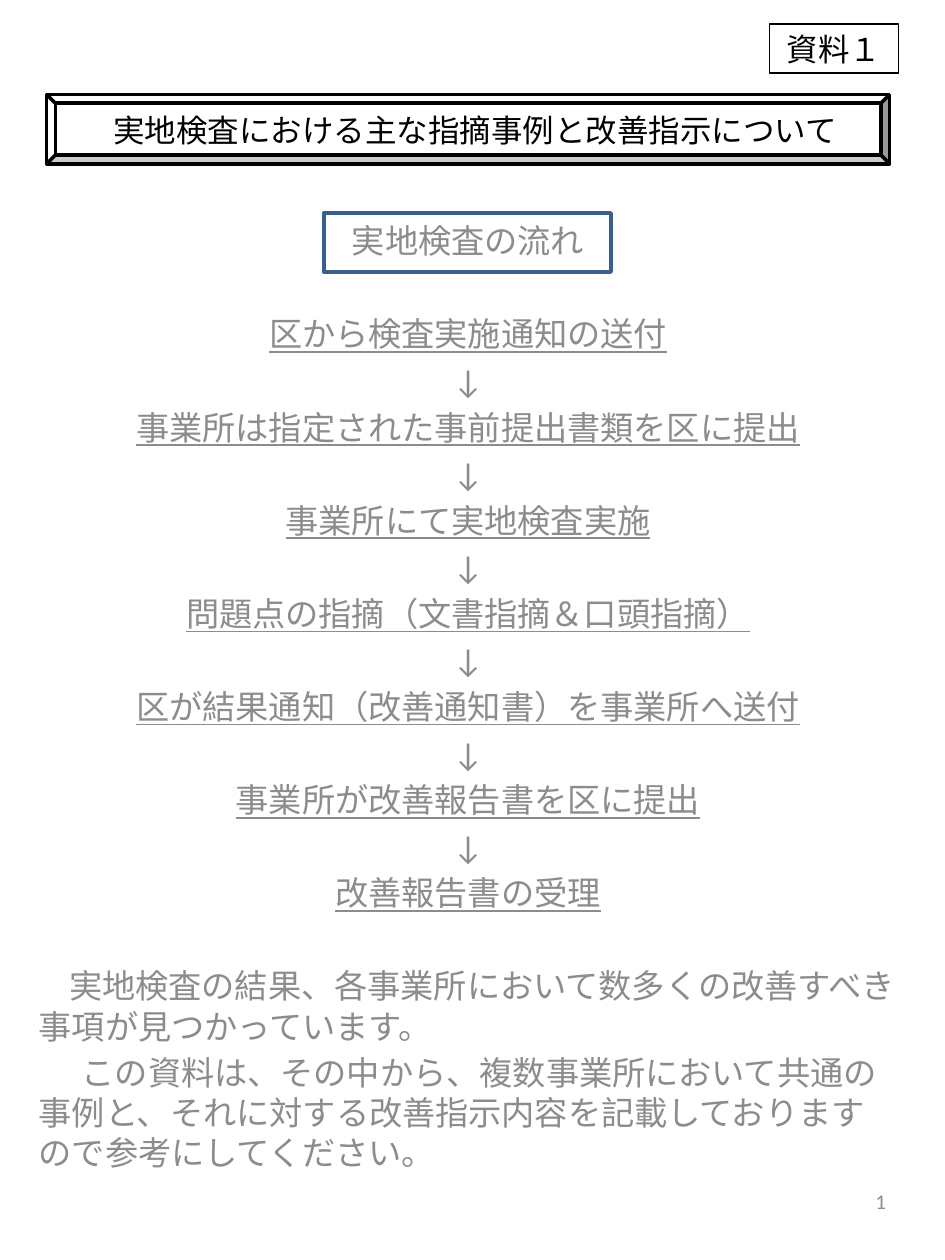
"""Build the one-page handout on the flow of on-site inspections."""
from dataclasses import dataclass

from pptx import Presentation
from pptx.dml.color import RGBColor
from pptx.enum import shapes, text
from pptx.util import Inches, Pt

COLORS = {"paper": "FFFFFF", "ink": "000000", "muted": "8C8C8C", "frame": "3A5F8C"}
LATIN, JAPANESE = "Calibri", "Noto Sans CJK JP"
LINE_HEIGHT, PARAGRAPH_GAP = 22.9, 3.7
SECTION_GAP = LINE_HEIGHT + 2 * PARAGRAPH_GAP
CENTER, LEFT, RIGHT = text.PP_ALIGN.CENTER, text.PP_ALIGN.LEFT, text.PP_ALIGN.RIGHT

HEADING = "実地検査における主な指摘事例と改善指示について"
FLOW_HEADING = "実地検査の流れ"
STEPS = [
    "区から検査実施通知の送付",
    "事業所は指定された事前提出書類を区に提出",
    "事業所にて実地検査実施",
    "問題点の指摘（文書指摘＆口頭指摘）",
    "区が結果通知（改善通知書）を事業所へ送付",
    "事業所が改善報告書を区に提出",
    "改善報告書の受理",
]
RESULT_NOTE = "実地検査の結果、各事業所において数多くの改善すべき事項が見つかっています。"
PURPOSE_NOTE = (
    "この資料は、その中から、複数事業所において共通の事例と、"
    "それに対する改善指示内容を記載しておりますので参考にしてください。"
)


@dataclass(frozen=True)
class Box:
    left: float
    top: float
    width: float
    height: float

    def lengths(self) -> tuple:
        return tuple(Inches(v) for v in (self.left, self.top, self.width, self.height))


@dataclass(frozen=True)
class Frame:
    preset: shapes.MSO_SHAPE
    box: Box
    line: str
    weight: float
    filled: bool = True


@dataclass(frozen=True)
class Line:
    wording: str
    align: text.PP_ALIGN = CENTER
    underline: bool = False
    gap: float = PARAGRAPH_GAP
    indent: float = 0


def rgb(name: str) -> RGBColor:
    return RGBColor.from_string(COLORS[name])


def draw_frame(slide, frame: Frame):
    outline = slide.shapes.add_shape(frame.preset, *frame.box.lengths())
    outline.shadow.inherit = False
    if frame.filled:
        outline.fill.solid()
        outline.fill.fore_color.rgb = rgb("paper")
    else:
        outline.fill.background()
    outline.line.color.rgb = rgb(frame.line)
    outline.line.width = Pt(frame.weight)
    return outline


def write_line(paragraph, line: Line, size: float, font: str, color: str) -> None:
    paragraph.text = line.wording
    paragraph.alignment = line.align
    if line.indent:
        paragraph._p.get_or_add_pPr().set("indent", str(Inches(line.indent)))
    for run in paragraph.runs:
        run.font.size = Pt(size)
        run.font.name = font
        run.font.color.rgb = rgb(color)
        run.font.underline = line.underline


def add_text_frame(slide, box: Box):
    frame = slide.shapes.add_textbox(*box.lengths()).text_frame
    frame.word_wrap = True
    return frame


def flow_lines() -> list[Line]:
    lines = [Line(FLOW_HEADING)]
    for index, step in enumerate(STEPS):
        if index:
            lines.append(Line("↓"))
        gap = PARAGRAPH_GAP if index else SECTION_GAP
        lines.append(Line(step, underline=True, gap=gap))
    lines.append(Line(RESULT_NOTE, LEFT, gap=SECTION_GAP, indent=0.24))
    lines.append(Line(PURPOSE_NOTE, LEFT, indent=0.34))
    return lines


def draw_flow(slide) -> None:
    flow = add_text_frame(slide, Box(0.21, 1.7, 7.01, 8.74))
    for index, line in enumerate(flow_lines()):
        paragraph = flow.add_paragraph() if index else flow.paragraphs[0]
        write_line(paragraph, line, 19, LATIN, "muted")
        paragraph.line_spacing = Pt(LINE_HEIGHT)
        paragraph.space_before = Pt(line.gap)


def draw_heading(slide) -> None:
    heading = slide.shapes.title
    heading.left, heading.top, heading.width, heading.height = Box(
        0.44, 0.83, 6.69, 0.4).lengths()
    heading.text_frame.vertical_anchor = text.MSO_ANCHOR.MIDDLE
    line = Line(HEADING, LEFT, indent=0.36)
    write_line(heading.text_frame.paragraphs[0], line, 18, JAPANESE, "ink")
    heading.element.getparent().append(heading.element)


def main() -> None:
    deck = Presentation()
    deck.slide_width, deck.slide_height = Inches(7.5), Inches(10)
    slide = deck.slides.add_slide(deck.slide_layouts[5])

    draw_frame(slide, Frame(shapes.MSO_SHAPE.BEVEL, Box(0.37, 0.75, 6.69, 0.55), "ink", 2))
    draw_frame(slide, Frame(shapes.MSO_SHAPE.RECTANGLE, Box(2.57, 1.69, 2.28, 0.47), "frame", 2))
    draw_flow(slide)

    page_number = add_text_frame(slide, Box(5.38, 9.27, 1.75, 0.53))
    page_number.vertical_anchor = text.MSO_ANCHOR.MIDDLE
    write_line(page_number.paragraphs[0], Line("1", RIGHT), 12, LATIN, "muted")

    draw_heading(slide)
    label = draw_frame(slide, Frame(
        shapes.MSO_SHAPE.RECTANGLE, Box(6.11, 0.19, 1.02, 0.39), "ink", 0.75, filled=False))
    label.text_frame.vertical_anchor = text.MSO_ANCHOR.MIDDLE
    write_line(label.text_frame.paragraphs[0], Line("資料１"), 18, JAPANESE, "ink")

    deck.save("out.pptx")


if __name__ == "__main__":
    main()
